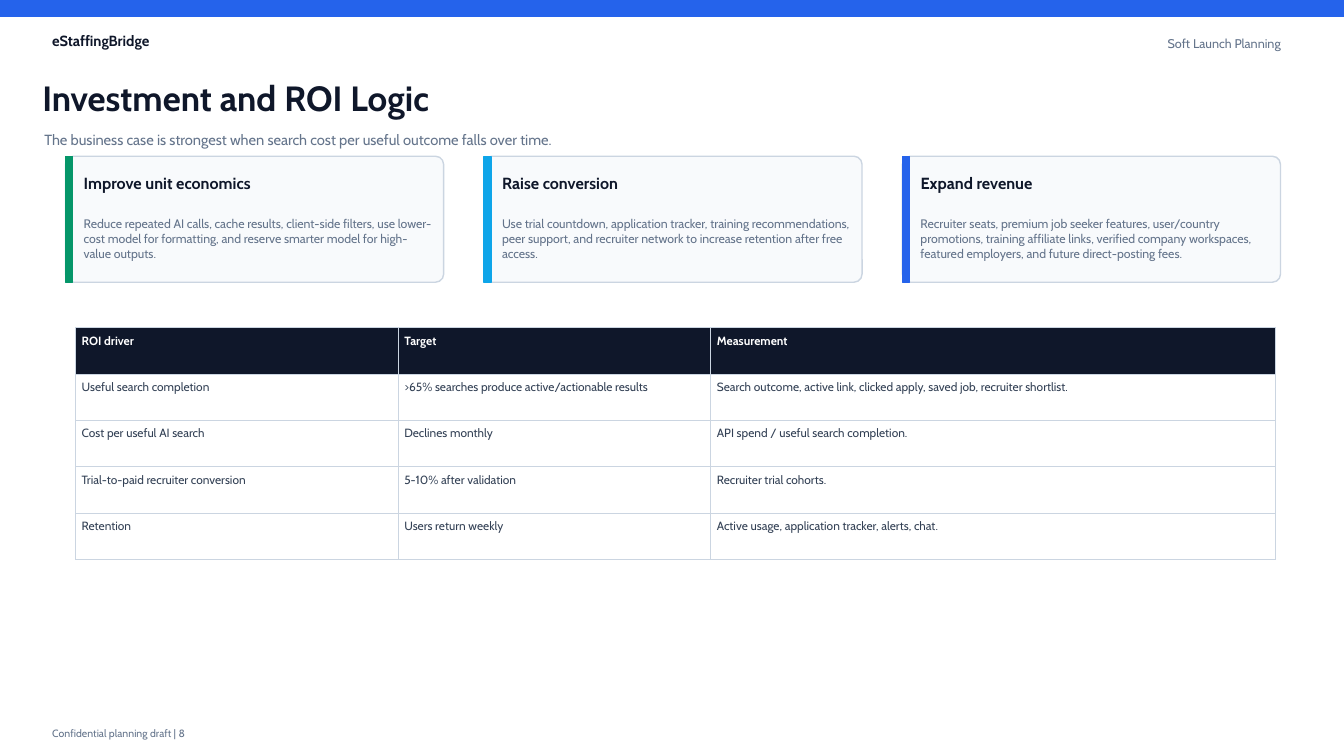
from dataclasses import dataclass

from lxml import etree
from pptx import Presentation
from pptx.dml.color import RGBColor
from pptx.enum.shapes import MSO_SHAPE
from pptx.enum.text import MSO_ANCHOR, PP_ALIGN
from pptx.oxml.ns import qn
from pptx.util import Inches, Pt

RECT, ROUND = MSO_SHAPE.RECTANGLE, MSO_SHAPE.ROUNDED_RECTANGLE
LEFT, RIGHT = PP_ALIGN.LEFT, PP_ALIGN.RIGHT
TOP, MIDDLE = MSO_ANCHOR.TOP, MSO_ANCHOR.MIDDLE


@dataclass(frozen=True)
class Theme:
    font: str = "Cabin"
    ink: str = "0F172A"
    muted: str = "64748B"
    body: str = "334155"
    white: str = "FFFFFF"
    panel: str = "F8FAFC"
    rule: str = "CBD5E1"
    blue: str = "2563EB"
    sky: str = "0EA5E9"
    green: str = "059669"
    title: float = 25
    lead: float = 10.5
    tag: float = 9
    head: float = 11.5
    note: float = 8.8
    cell: float = 8.5
    foot: float = 7.5


theme = Theme()
deck = Presentation()
deck.slide_width, deck.slide_height = Inches(13.33), Inches(7.5)
slide = deck.slides.add_slide(deck.slide_layouts[6])


def block(kind, at, fill, line):
    shape = slide.shapes.add_shape(kind, *map(Inches, at))
    shape.shadow.inherit = False
    shape.fill.solid()
    shape.fill.fore_color.rgb = RGBColor.from_string(fill)
    shape.line.color.rgb = RGBColor.from_string(line)
    shape.line.width = Pt(1)
    return shape


def write(frame, text, size, color, bold=False, align=LEFT):
    frame.word_wrap = True
    par = frame.paragraphs[0]
    par.alignment = align
    run = par.add_run()
    run.text = text
    run.font.name = theme.font
    run.font.size = Pt(size)
    run.font.bold = bold
    run.font.color.rgb = RGBColor.from_string(color)


# Top band
block(RECT, (0, 0, 13.33, 0.16), theme.blue, theme.blue)

# Header and footer labels, with the default insets
labels = [
    ((0.42, 0.28, 2.3, 0.25), "eStaffingBridge", theme.lead, theme.ink, True, LEFT),
    ((10.35, 0.3, 2.45, 0.26), "Soft Launch Planning", theme.tag, theme.muted, False, RIGHT),
    ((0.42, 7.18, 4.6, 0.2), "Confidential planning draft | 8", theme.foot, theme.muted, False, LEFT),
]
for at, *style in labels:
    frame = slide.shapes.add_textbox(*map(Inches, at)).text_frame
    frame.vertical_anchor = MIDDLE
    write(frame, *style)

# Title and subtitle; the cards add their own text below
texts = [
    ((0.42, 0.72, 8.7, 0.5), "Investment and ROI Logic", theme.title, theme.ink, True),
    ((0.44, 1.22, 9.5, 0.34),
     "The business case is strongest when search cost per useful outcome falls over time.",
     theme.lead, theme.muted, False),
]

# Cards
cards = [
    ("Improve unit economics", theme.green,
     "Reduce repeated AI calls, cache results, client-side filters, use lower-cost model "
     "for formatting, and reserve smarter model for high-value outputs."),
    ("Raise conversion", theme.sky,
     "Use trial countdown, application tracker, training recommendations, peer support, "
     "and recruiter network to increase retention after free access."),
    ("Expand revenue", theme.blue,
     "Recruiter seats, premium job seeker features, user/country promotions, training "
     "affiliate links, verified company workspaces, featured employers, and future "
     "direct-posting fees."),
]
for i, (name, accent, note) in enumerate(cards):
    x = 0.65 + i * 4.15
    card = block(ROUND, (x, 1.55, 3.75, 1.25), theme.panel, theme.rule)
    card.adjustments[0] = 0.064
    block(RECT, (x, 1.55, 0.07, 1.25), accent, accent)
    texts += [
        ((x + 0.18, 1.69, 3.45, 0.25), name, theme.head, theme.ink, True),
        ((x + 0.18, 2.03, 3.47, 0.67), note, theme.note, theme.muted, False),
    ]

# Text without insets
for at, *style in texts:
    frame = slide.shapes.add_textbox(*map(Inches, at)).text_frame
    frame.vertical_anchor = MIDDLE
    frame.margin_left = frame.margin_right = frame.margin_top = frame.margin_bottom = 0
    write(frame, *style)

# ROI table
rows = [
    ("ROI driver", "Target", "Measurement"),
    ("Useful search completion", ">65% searches produce active/actionable results",
     "Search outcome, active link, clicked apply, saved job, recruiter shortlist."),
    ("Cost per useful AI search", "Declines monthly", "API spend / useful search completion."),
    ("Trial-to-paid recruiter conversion", "5-10% after validation", "Recruiter trial cohorts."),
    ("Retention", "Users return weekly", "Active usage, application tracker, alerts, chat."),
]
place = map(Inches, (0.75, 3.25, 11.9, 2.3))
table = slide.shapes.add_table(len(rows), 3, *place).table
for col, width in zip(table.columns, (3.2, 3.1, 5.6)):
    col.width = Inches(width)
for r, row in enumerate(rows):
    table.rows[r].height = Inches(0.46)
    top = r == 0
    for c, text in enumerate(row):
        cell = table.cell(r, c)
        cell.vertical_anchor = TOP
        cell.margin_left = cell.margin_right = Inches(0.06)
        cell.margin_top = cell.margin_bottom = Inches(0.06)
        write(cell.text_frame, text, theme.cell, theme.white if top else theme.body, top)
        # Borders come before the fill in the cell properties
        props = cell._tc.get_or_add_tcPr()
        for side in ("a:lnL", "a:lnR", "a:lnT", "a:lnB"):
            edge = etree.SubElement(props, qn(side), w=str(Pt(0.7)))
            paint = etree.SubElement(edge, qn("a:solidFill"))
            etree.SubElement(paint, qn("a:srgbClr"), val=theme.rule)
        cell.fill.solid()
        cell.fill.fore_color.rgb = RGBColor.from_string(theme.ink if top else theme.white)

deck.save("out.pptx")
